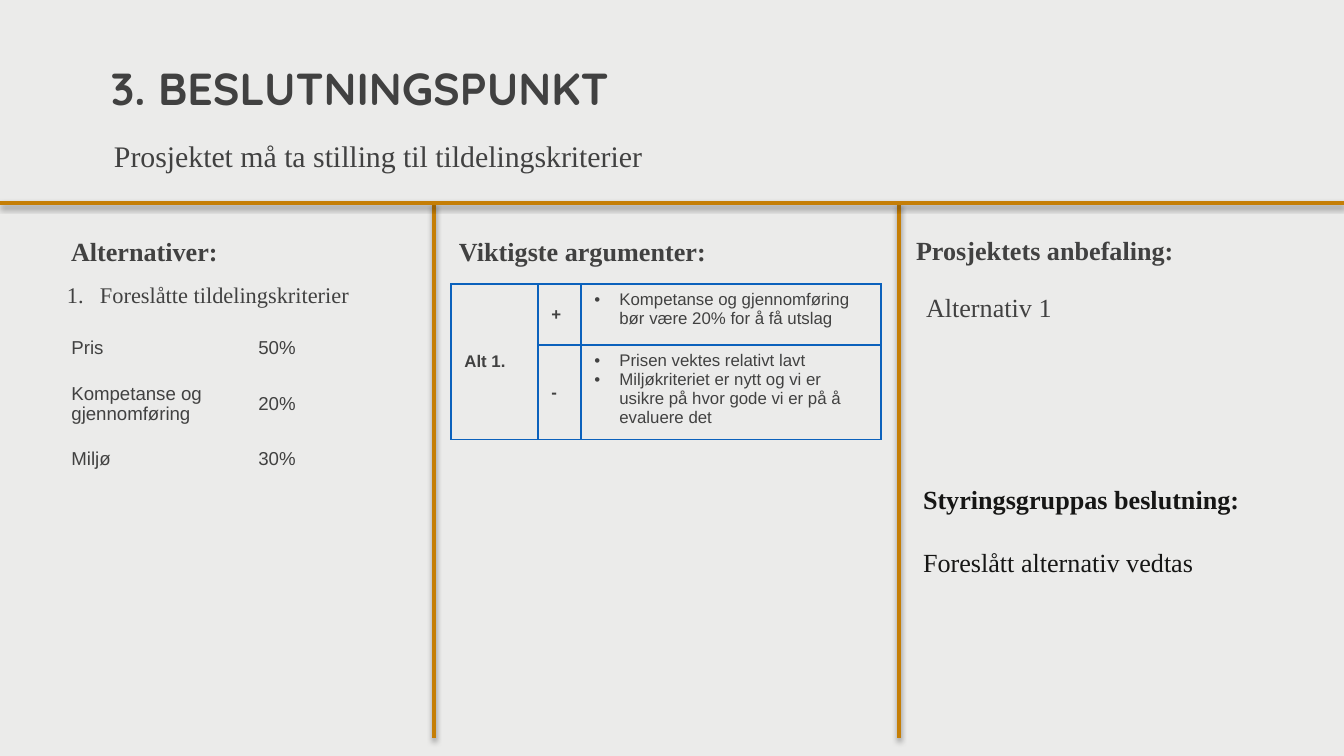
from lxml.etree import SubElement
from pptx import Presentation
from pptx.dml.color import RGBColor
from pptx.enum.shapes import MSO_CONNECTOR as Connector
from pptx.enum.text import MSO_ANCHOR as Anchor
from pptx.oxml.ns import qn
from pptx.util import Pt

PX = 6804  # EMU per pixel
PLAIN_TABLE = "{2D5ABB26-0587-4C30-8999-92F81FD0307C}"


def px(length):
    return length * PX


def color(hex_text):
    return RGBColor.from_string(hex_text)


def add_xml(parent, tag, **attributes):
    values = {name: str(value) for name, value in attributes.items()}
    return SubElement(parent, qn(tag), values)


def write(para, text, size=14, font="Times New Roman", ink="414141", bold=False,
          bullet=None, numbering=None, indent=0, spacing=None):
    if bullet or numbering:
        props = para._p.get_or_add_pPr()
        props.set("marL", str(px(indent)))
        props.set("indent", str(-px(indent)))
        if bullet:
            add_xml(props, "a:buFont", typeface="Arial")
            add_xml(props, "a:buChar", char=bullet)
        else:
            add_xml(props, "a:buAutoNum", type=numbering)
    if spacing:
        para.line_spacing = spacing
    span = para.add_run()
    span.text = text
    span.font.size = Pt(size)
    span.font.name = font
    span.font.bold = bold
    span.font.color.rgb = color(ink)


class Slide:
    """Holds the deck, its current page and the shared colours."""

    background = "EBEBEA"
    rule_color = "C57E06"
    border_color = "0B61BC"

    def __init__(self):
        self.deck = Presentation()
        self.deck.slide_width, self.deck.slide_height = px(1344), px(756)
        self.page = self.deck.slides.add_slide(self.deck.slide_layouts[6])
        fill = self.page.background.fill
        fill.solid()
        fill.fore_color.rgb = color(self.background)

    def text(self, left, top, width, height, text, inset=(13, 7),
             anchor=Anchor.TOP, **style):
        box = self.page.shapes.add_textbox(px(left), px(top), px(width), px(height))
        frame = box.text_frame
        frame.word_wrap = True
        frame.vertical_anchor = anchor
        frame.margin_left = frame.margin_right = px(inset[0])
        frame.margin_top = frame.margin_bottom = px(inset[1])
        write(frame.paragraphs[0], text, **style)

    def rule(self, x1, y1, x2, y2):
        """Draw a straight line with a soft shadow below it."""
        line = self.page.shapes.add_connector(
            Connector.STRAIGHT, px(x1), px(y1), px(x2), px(y2))
        line.line.width = Pt(2)
        line.line.color.rgb = color(self.rule_color)
        effects = add_xml(line._element.spPr, "a:effectLst")
        shadow = add_xml(effects, "a:outerShdw", blurRad=Pt(3.1), dist=Pt(1.6),
                         dir=5400000, rotWithShape=0)
        add_xml(add_xml(shadow, "a:srgbClr", val="000000"), "a:alpha", val=38000)

    def table(self, left, top, widths, heights):
        frame = self.page.shapes.add_table(
            len(heights), len(widths), px(left), px(top),
            px(sum(widths)), px(sum(heights)))
        table = frame.table
        table.first_row = table.horz_banding = False
        table._tbl.tblPr.find(qn("a:tableStyleId")).text = PLAIN_TABLE
        for column, width in zip(table.columns, widths):
            column.width = px(width)
        for row, height in zip(table.rows, heights):
            row.height = px(height)
        return table

    def cell(self, cell, lines, anchor=Anchor.MIDDLE, **style):
        cell.vertical_anchor = anchor
        frame = cell.text_frame
        for index, line in enumerate(lines):
            para = frame.add_paragraph() if index else frame.paragraphs[0]
            write(para, line, font="Arial", **style)

    def borders(self, table):
        for cell in table.iter_cells():
            props = cell._tc.get_or_add_tcPr()
            for side in ("a:lnL", "a:lnR", "a:lnT", "a:lnB"):
                fill = add_xml(add_xml(props, side, w=Pt(1)), "a:solidFill")
                add_xml(fill, "a:srgbClr", val=self.border_color)
            cell.fill.background()


def add_arguments(slide):
    table = slide.table(451, 284, (87, 43, 300), (61, 89))
    slide.borders(table)
    table.cell(0, 0).merge(table.cell(1, 0))
    slide.cell(table.cell(0, 0), ["Alt 1."], size=9, bold=True)
    arguments = (
        ("+", ["Kompetanse og gjennomføring bør være 20% for å få utslag"]),
        ("-", ["Prisen vektes relativt lavt",
               "Miljøkriteriet er nytt og vi er usikre på hvor gode vi er på å "
               "evaluere det"]),
    )
    for row, (sign, lines) in enumerate(arguments):
        slide.cell(table.cell(row, 1), [sign], size=9, bold=True)
        slide.cell(table.cell(row, 2), lines, anchor=Anchor.TOP, size=9,
                   bullet="•", indent=25)


def add_criteria(slide):
    table = slide.table(58, 325, (187, 187), (47, 64, 47))
    criteria = (("Pris", "50%"), ("Kompetanse og gjennomføring", "20%"),
                ("Miljø", "30%"))
    for row, values in enumerate(criteria):
        for column, value in enumerate(values):
            cell = table.cell(row, column)
            cell.fill.background()
            slide.cell(cell, [value], size=10)


def main():
    slide = Slide()
    slide.text(102, 0, 1175, 179, "Prosjektet må ta stilling til tildelingskriterier",
               inset=(12, 6), anchor=Anchor.BOTTOM, size=16)
    add_arguments(slide)
    slide.text(914, 285, 363, 142, "Alternativ 1", inset=(12, 6))
    for left, top, heading in ((58, 228, "Alternativer:"),
                               (446, 228, "Viktigste argumenter:"),
                               (903, 227, "Prosjektets anbefaling:")):
        slide.text(left, top, 374, 46, heading, bold=True)
    slide.text(67, 284, 356, 366, "Foreslåtte tildelingskriterier", inset=(0, 0),
               size=12, numbering="arabicPeriod", indent=33, spacing=0.9)
    for x in (434, 899):
        slide.rule(x, 203, x, 738)
    slide.rule(0, 203, 1344, 203)
    slide.text(98, 54, 1015, 67, "3. BESLUTNINGSPUNKT", size=24,
               font="Quicksand", bold=True)
    slide.text(910, 476, 374, 46, "Styringsgruppas beslutning:", ink="161615",
               bold=True)
    slide.text(910, 539, 370, 46, "Foreslått alternativ vedtas", ink="161615")
    add_criteria(slide)
    slide.deck.save("out.pptx")


if __name__ == "__main__":
    main()
